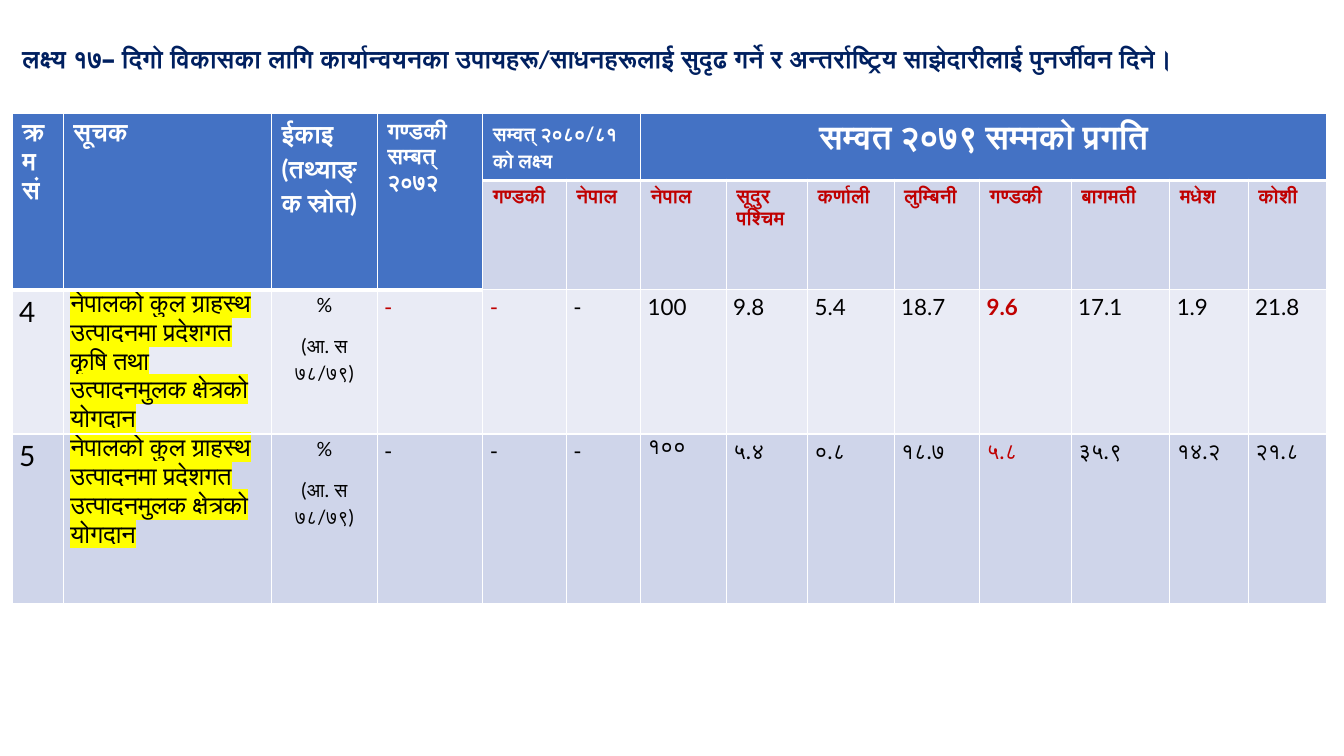
from lxml.etree import SubElement
from pptx import Presentation
from pptx.dml.color import RGBColor
from pptx.enum.text import MSO_ANCHOR, MSO_AUTO_SIZE, PP_ALIGN
from pptx.oxml import parse_xml
from pptx.oxml.ns import nsdecls, qn
from pptx.util import Inches, Pt

# Content
HEADING = ("लक्ष्य १७– दिगो विकासका लागि कार्यान्वयनका उपायहरू/साधनहरूलाई सुदृढ गर्ने "
           "र अन्तर्राष्ट्रिय साझेदारीलाई पुनर्जीवन दिने।")
# text, first column, rows spanned, columns spanned, size, top margin
HEADERS = [
    ("क्रमसं", 0, 2, 1, 18, 0.05),
    ("सूचक", 1, 2, 1, 18, 0.05),
    ("ईकाइ (तथ्याङ्क स्रोत)", 2, 2, 1, 18, 0),
    ("गण्डकी सम्बत् २०७२", 3, 2, 1, 16, 0.05),
    ("सम्वत् २०८०/८१ को लक्ष्य", 4, 1, 2, 14, 0.05),
    ("सम्वत २०७९ सम्मको प्रगति", 6, 1, 8, 24, 0.05),
]
REGIONS = ["गण्डकी", "नेपाल", "नेपाल", "सूदुर पश्चिम", "कर्णाली", "लुम्बिनी",
           "गण्डकी", "बागमती", "मधेश", "कोशी"]
UNIT = "%\n(आ. स ७८/७९)"
INDICATORS = [
    ["4", "नेपालको कुल ग्राहस्थ उत्पादनमा प्रदेशगत कृषि तथा उत्पादनमुलक क्षेत्रको योगदान",
     UNIT, "-", "-", "-", "100", "9.8", "5.4", "18.7", "9.6", "17.1", "1.9", "21.8"],
    ["5", "नेपालको कुल ग्राहस्थ उत्पादनमा प्रदेशगत उत्पादनमुलक क्षेत्रको योगदान",
     UNIT, "-", "-", "-", "१००", "५.४", "०.८", "१८.७", "५.८", "३५.९", "१४.२", "२१.८"],
]
RED_CELLS = {(0, 3), (0, 4), (0, 10), (1, 10)}
BOLD_CELLS = {(0, 10)}

# Look
COLORS = {"white": "FFFFFF", "navy": "002060", "red": "C00000", "black": "000000",
          "header": "4472C4", "band": "CFD5EA", "light": "E9EBF5", "marker": "FFFF00"}
COLUMNS = [0.51, 2.07, 1.05, 1.05, 0.83, 0.74, 0.85, 0.81, 0.86, 0.85, 0.91, 0.98, 0.78, 0.78]
ROWS = [0.66, 1.08, 1.43, 1.68]
LEFT, TABLE_TOP, TABLE_WIDTH = 0.12, 1.13, 13.04
SIZES = {0: 20, 1: 18, 2: 14}
VALUE_SIZE = 16
BODY_MARGINS = {"margin_left": Inches(0.07), "margin_right": Inches(0.07),
                "margin_top": 0, "margin_bottom": 0}


def line_spacing(text):
    """Lines purely in Devanagari sit closer than lines with Latin signs."""
    return 1.15 if any(sign.isascii() and not sign.isspace() for sign in text) else 0.95


def write(frame, text, size, color, bold=False, align=PP_ALIGN.LEFT, font="Lato",
          complex_font="Lato", marker=None):
    frame.text = text
    paragraph_format = {"alignment": align, "line_spacing": line_spacing(text),
                        "space_before": Pt(0), "space_after": Pt(10)}
    run_format = {"size": Pt(size), "bold": bold, "name": font}
    for paragraph in frame.paragraphs:
        for name, value in paragraph_format.items():
            setattr(paragraph, name, value)
        for run in paragraph.runs:
            for name, value in run_format.items():
                setattr(run.font, name, value)
            run.font.color.rgb = RGBColor.from_string(COLORS[color])
            properties = run.font._element
            if complex_font:
                SubElement(properties, qn("a:cs"), typeface=complex_font)
            if marker:
                properties.find(qn("a:solidFill")).addnext(parse_xml(
                    f'<a:highlight {nsdecls("a")}><a:srgbClr val="{COLORS[marker]}"/></a:highlight>'))


def paint(cell, fill, bottom=1):
    cell.fill.solid()
    cell.fill.fore_color.rgb = RGBColor.from_string(COLORS[fill])
    properties = cell._tc.get_or_add_tcPr()
    for place, (side, width) in enumerate({"L": 1, "R": 1, "T": 1, "B": bottom}.items()):
        properties.insert(place, parse_xml(
            f'<a:ln{side} {nsdecls("a")} w="{Pt(width)}"><a:solidFill>'
            f'<a:srgbClr val="{COLORS["white"]}"/></a:solidFill></a:ln{side}>'))


prs = Presentation()
prs.slide_width, prs.slide_height = Inches(13.33), Inches(7.5)
slide = prs.slides.add_slide(prs.slide_layouts[5])

# Heading
heading = slide.shapes.title
heading_place = {"left": LEFT, "top": 0.33, "width": 13, "height": 0.44}
for name, value in heading_place.items():
    setattr(heading, name, Inches(value))
write(heading.text_frame, HEADING, 18, "navy", True, font="Calibri", complex_font=None)
heading_format = {"word_wrap": True, "auto_size": MSO_AUTO_SIZE.NONE,
                  "vertical_anchor": MSO_ANCHOR.TOP}
for name, value in heading_format.items():
    setattr(heading.text_frame, name, value)

# Table grid
progress = slide.shapes.add_table(len(ROWS), len(COLUMNS), Inches(LEFT), Inches(TABLE_TOP),
                                  Inches(TABLE_WIDTH), Inches(sum(ROWS))).table
progress.first_row = progress.horz_banding = False
for column, share in zip(progress.columns, COLUMNS):
    column.width = Inches(TABLE_WIDTH * share / sum(COLUMNS))
for row, height in zip(progress.rows, ROWS):
    row.height = Inches(height)

# Header rows
for text, first, deep, wide, size, margin in HEADERS:
    for row in range(deep):
        for column in range(first, first + wide):
            paint(progress.cell(row, column), "header", bottom=3)
    cell = progress.cell(0, first)
    cell.merge(progress.cell(deep - 1, first + wide - 1))
    cell.margin_top = Inches(margin)
    write(cell.text_frame, text, size, "white", True,
          PP_ALIGN.CENTER if wide == 8 else PP_ALIGN.LEFT)
for column, region in enumerate(REGIONS, len(COLUMNS) - len(REGIONS)):
    cell = progress.cell(1, column)
    paint(cell, "band")
    write(cell.text_frame, region, 14, "red", True)

# Indicator rows
for row, (indicator, fill) in enumerate(zip(INDICATORS, ("light", "band"))):
    for column, text in enumerate(indicator):
        cell = progress.cell(row + 2, column)
        paint(cell, fill)
        for name, value in BODY_MARGINS.items():
            setattr(cell, name, value)
        write(cell.text_frame, text, SIZES.get(column, VALUE_SIZE),
              "red" if (row, column) in RED_CELLS else "black",
              (row, column) in BOLD_CELLS,
              PP_ALIGN.CENTER if column == 2 else PP_ALIGN.LEFT,
              marker="marker" if column == 1 else None)

prs.save("out.pptx")
